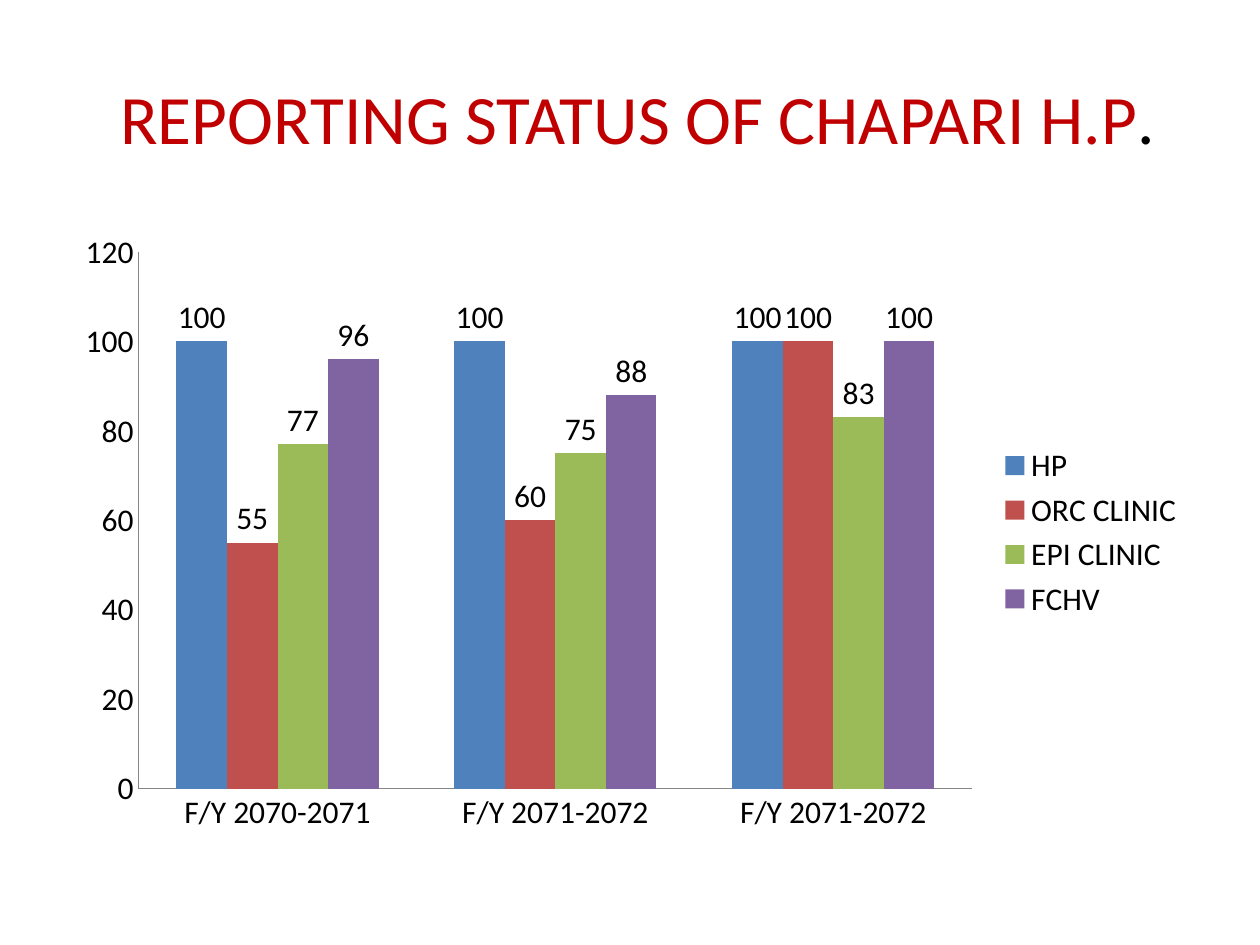
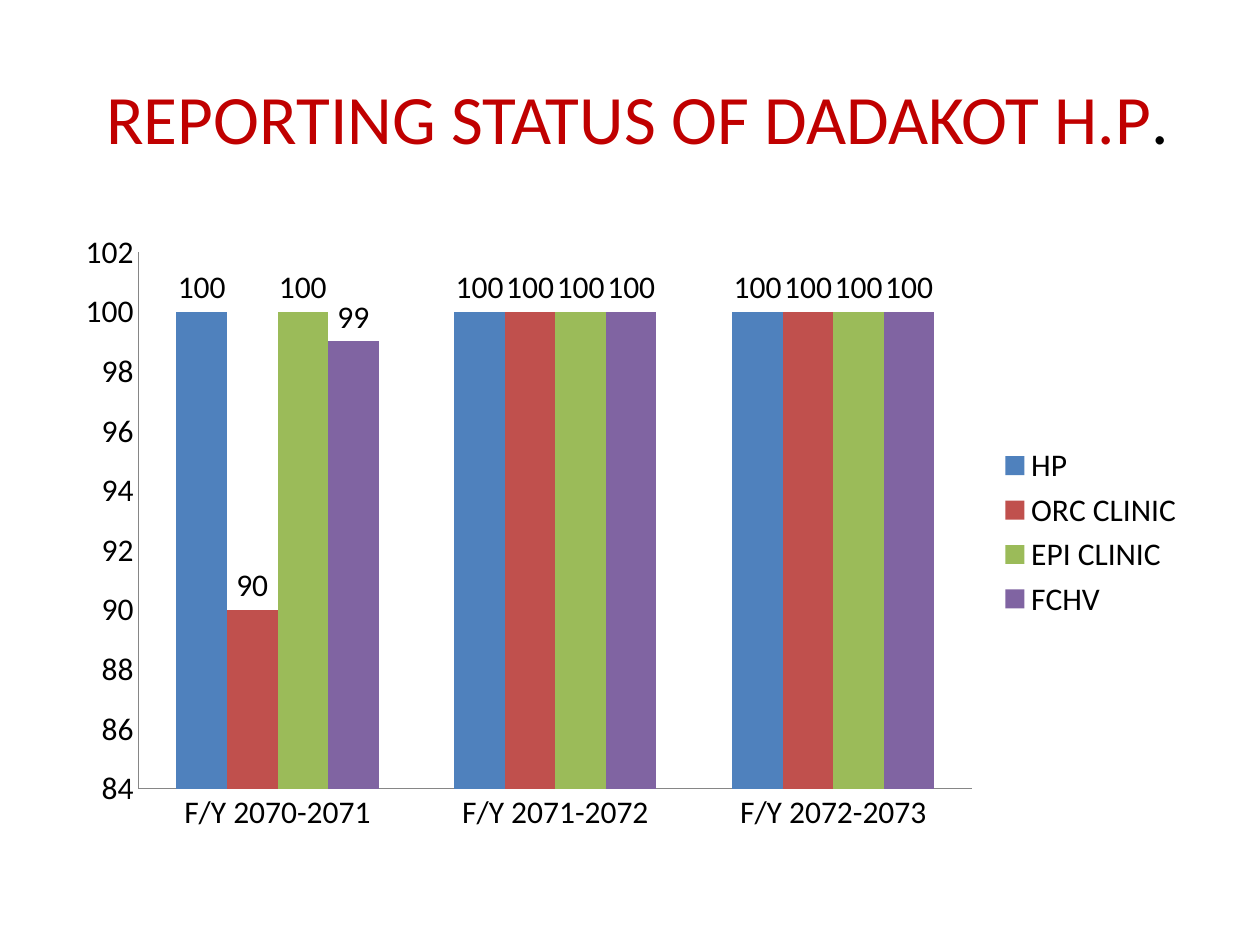
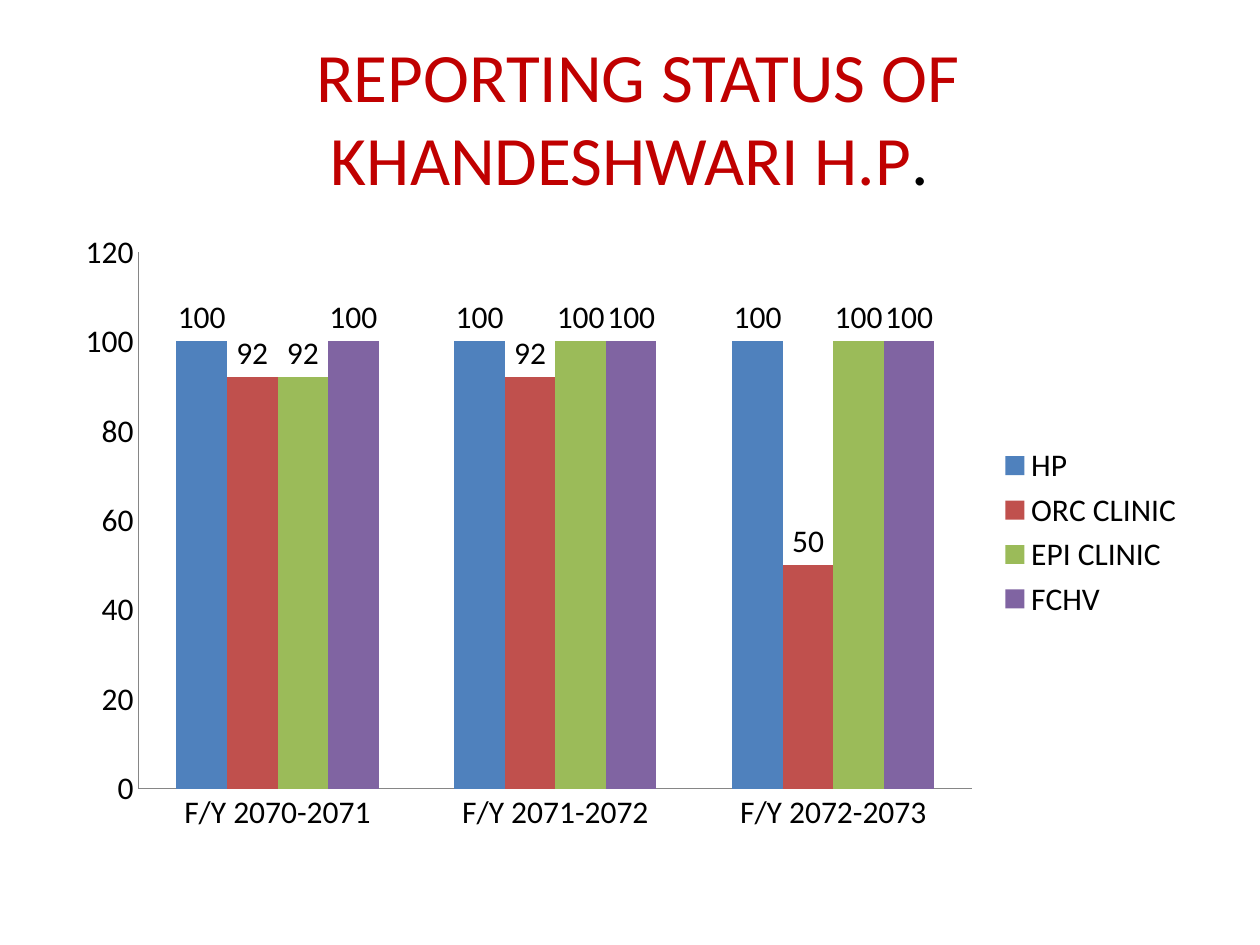
from pptx import Presentation
from pptx.chart.data import CategoryChartData
from pptx.dml.color import RGBColor
from pptx.enum.chart import XL_CHART_TYPE, XL_LABEL_POSITION, XL_LEGEND_POSITION, XL_TICK_MARK
from pptx.enum.text import MSO_ANCHOR, PP_ALIGN
from pptx.util import Inches, Pt

FONT = "Calibri"
RED, BLACK, AXIS_GRAY = "C00000", "000000", "868686"
SERIES_COLORS = {"HP": "4F81BD", "ORC CLINIC": "C0504D", "EPI CLINIC": "9BBB59", "FCHV": "8064A2"}
LEFT, WIDTH = Inches(0.5), Inches(9)

# Health post, fiscal years, values per series, value axis scale
REPORTS = [
    ("CHAPARI", ["2070-2071", "2071-2072", "2071-2072"],
     [(100, 100, 100), (55, 60, 100), (77, 75, 83), (96, 88, 100)],
     {"minimum_scale": 0, "maximum_scale": 120, "major_unit": 20}),
    ("DADAKOT", ["2070-2071", "2071-2072", "2072-2073"],
     [(100, 100, 100), (90, 100, 100), (100, 100, 100), (99, 100, 100)],
     {"minimum_scale": 84, "maximum_scale": 102, "major_unit": 2}),
    ("KHANDESHWARI", ["2070-2071", "2071-2072", "2072-2073"],
     [(100, 100, 100), (92, 92, 50), (92, 100, 100), (100, 100, 100)],
     {"minimum_scale": 0, "maximum_scale": 120, "major_unit": 20}),
]


def rgb(color):
    return RGBColor.from_string(color)


def style_font(font, size, color):
    font.name, font.size = FONT, Pt(size)
    font.color.rgb = rgb(color)


prs = Presentation()
prs.slide_width, prs.slide_height = Inches(10), Inches(7.5)

for post, years, values, scale in REPORTS:
    s = prs.slides.add_slide(prs.slide_layouts[6])

    # Title
    tf = s.shapes.add_textbox(LEFT, Inches(0.3), WIDTH, Inches(1.25)).text_frame
    tf.word_wrap = True
    tf.vertical_anchor = MSO_ANCHOR.MIDDLE
    p = tf.paragraphs[0]
    p.alignment = PP_ALIGN.CENTER
    for text, color in [(f" REPORTING STATUS OF {post} H.P", RED), (".", BLACK)]:
        r = p.add_run()
        r.text = text
        style_font(r.font, 39.6, color)

    # Column chart
    data = CategoryChartData()
    data.categories = [f"F/Y {year}" for year in years]
    for name, vals in zip(SERIES_COLORS, values):
        data.add_series(name, vals)
    chart = s.shapes.add_chart(XL_CHART_TYPE.COLUMN_CLUSTERED, LEFT, Inches(1.75),
                               WIDTH, Inches(4.95), data).chart
    style_font(chart.font, 18, BLACK)
    chart.has_title = False
    chart.has_legend = True
    chart.legend.position = XL_LEGEND_POSITION.RIGHT
    chart.legend.include_in_layout = False

    for axis in (chart.category_axis, chart.value_axis):
        axis.has_major_gridlines = False
        axis.major_tick_mark = axis.minor_tick_mark = XL_TICK_MARK.NONE
        axis.format.line.color.rgb = rgb(AXIS_GRAY)
        axis.format.line.width = Pt(0.75)
    for setting, value in scale.items():
        setattr(chart.value_axis, setting, value)

    plot = chart.plots[0]
    plot.gap_width, plot.overlap = 150, 0
    plot.vary_by_categories = False
    for series in plot.series:
        series.format.fill.solid()
        series.format.fill.fore_color.rgb = rgb(SERIES_COLORS[series.name])
        series.invert_if_negative = False
        series.data_labels.show_value = True
        series.data_labels.position = XL_LABEL_POSITION.OUTSIDE_END

prs.save("out.pptx")
